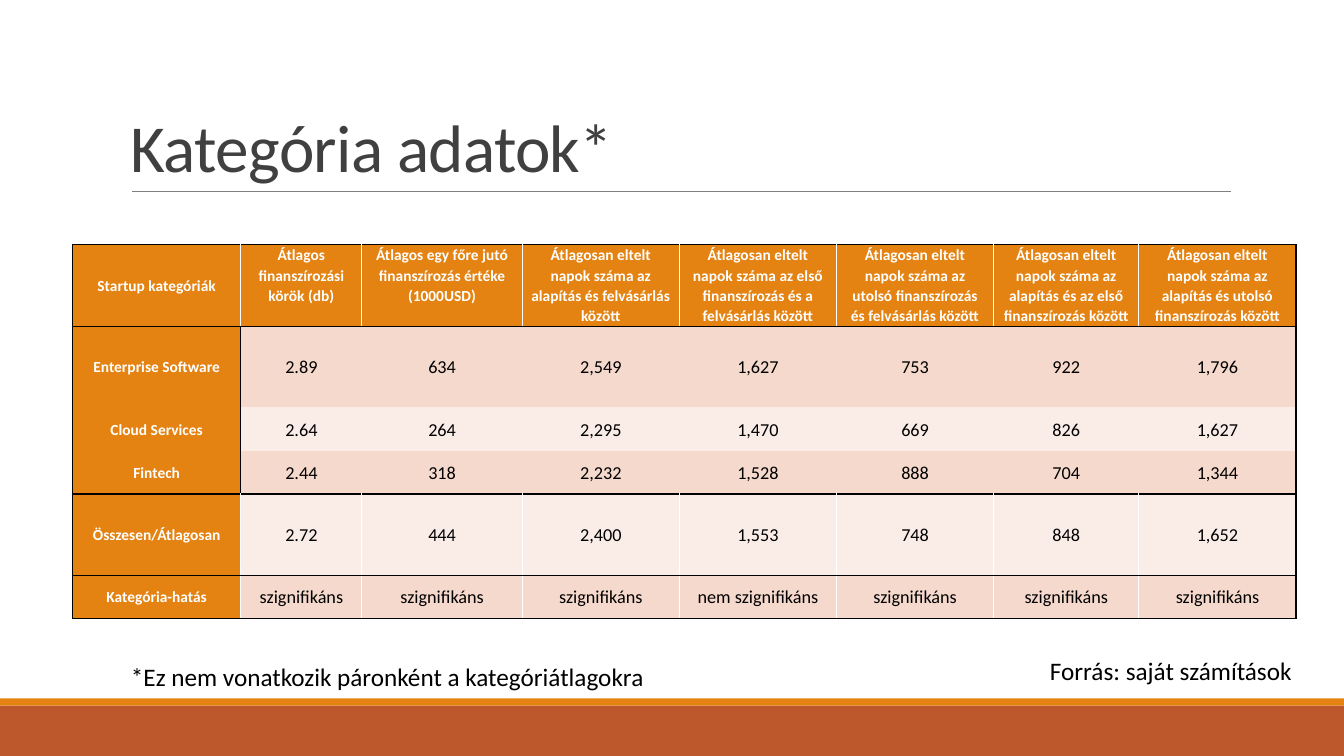
from dataclasses import dataclass

from lxml.etree import SubElement
from pptx import Presentation
from pptx.dml.color import RGBColor
from pptx.enum.shapes import MSO_CONNECTOR, MSO_SHAPE
from pptx.enum.text import MSO_ANCHOR, MSO_AUTO_SIZE, PP_ALIGN
from pptx.oxml.ns import qn
from pptx.util import Cm, Pt


@dataclass(frozen=True)
class Theme:
    font: str = "Calibri"
    orange: str = "E48312"
    rust: str = "BD582C"
    band_dark: str = "F5D9CC"
    band_light: str = "FAEDE7"
    title: str = "404040"
    rule: str = "808080"
    black: str = "000000"
    white: str = "FFFFFF"
    title_size: float = 48
    note_size: float = 18
    value_size: float = 13
    header_size: float = 11


HEADERS = [
    "Startup kategóriák",
    "Átlagos finanszírozási körök (db)",
    "Átlagos egy főre jutó finanszírozás értéke (1000USD)",
    "Átlagosan eltelt napok száma az alapítás és felvásárlás között",
    "Átlagosan eltelt napok száma az első finanszírozás és a felvásárlás között",
    "Átlagosan eltelt napok száma az utolsó finanszírozás és felvásárlás között",
    "Átlagosan eltelt napok száma az alapítás és az első finanszírozás között",
    "Átlagosan eltelt napok száma az alapítás és utolsó finanszírozás között",
]
ROWS = [
    HEADERS,
    ["Enterprise Software", "2.89", "634", "2,549", "1,627", "753", "922", "1,796"],
    ["Cloud Services", "2.64", "264", "2,295", "1,470", "669", "826", "1,627"],
    ["Fintech", "2.44", "318", "2,232", "1,528", "888", "704", "1,344"],
    ["Összesen/Átlagosan", "2.72", "444", "2,400", "1,553", "748", "848", "1,652"],
    ["Kategória-hatás"] + ["szignifikáns"] * 3 + ["nem szignifikáns"] + ["szignifikáns"] * 3,
]
COL_WIDTHS = [4.24, 3.05, 4.04, 3.96, 3.96, 3.96, 3.66, 3.96]
ROW_HEIGHTS = [2.05, 2.05, 1.09, 1.09, 2.05, 1.09]
CATEGORY_ROWS = range(1, 4)


class SlideBuilder:
    def __init__(self, slide, theme):
        self.slide = slide
        self.theme = theme

    def run(self, p, text, size, color, bold=False):
        r = p.add_run()
        r.text = text
        r.font.name = self.theme.font
        r.font.size = Pt(size)
        r.font.bold = bold
        r.font.color.rgb = RGBColor.from_string(color)
        return r

    def bar(self, top, height, color):
        sp = self.slide.shapes.add_shape(
            MSO_SHAPE.RECTANGLE, 0, Cm(top), Cm(33.87), Cm(height))
        sp.shadow.inherit = False
        sp.fill.solid()
        sp.fill.fore_color.rgb = RGBColor.from_string(color)
        sp.line.fill.background()

    def rule(self, left, right, y):
        line = self.slide.shapes.add_connector(
            MSO_CONNECTOR.STRAIGHT, Cm(left), Cm(y), Cm(right), Cm(y))
        line.line.color.rgb = RGBColor.from_string(self.theme.rule)
        line.line.width = Pt(0.5)
        SubElement(line.element.spPr, qn("a:effectLst"))

    def textbox(self, left, top, width, height):
        sp = self.slide.shapes.add_textbox(Cm(left), Cm(top), Cm(width), Cm(height))
        sp.text_frame.word_wrap = True
        return sp.text_frame

    def title(self, text):
        tf = self.textbox(3.05, 0.79, 27.94, 4.04)
        tf.vertical_anchor = MSO_ANCHOR.BOTTOM
        p = tf.paragraphs[0]
        p.line_spacing = 0.85
        r = self.run(p, text, self.theme.title_size, self.theme.title)
        r.font._element.set("spc", "-50")

    def note(self, text, left, top, width):
        tf = self.textbox(left, top, width, 1.03)
        tf.auto_size = MSO_AUTO_SIZE.SHAPE_TO_FIT_TEXT
        self.run(tf.paragraphs[0], text, self.theme.note_size, self.theme.black)

    def vertical_edge(self, row, edge):
        if edge in (0, len(COL_WIDTHS)):
            return self.theme.black
        if row in CATEGORY_ROWS:
            return self.theme.black if edge == 1 else None
        return self.theme.white

    def horizontal_edge(self, edge):
        # The category rows form one block with no lines between them
        return None if edge in CATEGORY_ROWS[1:] else self.theme.black

    def borders(self, cell, row, col):
        tc_pr = cell._tc.get_or_add_tcPr()
        edges = {
            "a:lnL": self.vertical_edge(row, col),
            "a:lnR": self.vertical_edge(row, col + 1),
            "a:lnT": self.horizontal_edge(row),
            "a:lnB": self.horizontal_edge(row + 1),
        }
        for tag, color in edges.items():
            ln = SubElement(tc_pr, qn(tag), w=str(Pt(1)))
            if color:
                fill = SubElement(ln, qn("a:solidFill"))
                SubElement(fill, qn("a:srgbClr"), val=color)
            else:
                SubElement(ln, qn("a:noFill"))

    def cell(self, cell, text, row, col):
        th = self.theme
        heading = row == 0 or col == 0
        band = th.band_dark if row % 2 else th.band_light
        self.borders(cell, row, col)
        cell.fill.solid()
        cell.fill.fore_color.rgb = RGBColor.from_string(th.orange if heading else band)
        cell.margin_left = cell.margin_right = Cm(0.18)
        cell.margin_top = cell.margin_bottom = 0
        top = row == 0 and col > 0
        cell.vertical_anchor = MSO_ANCHOR.TOP if top else MSO_ANCHOR.MIDDLE
        p = cell.text_frame.paragraphs[0]
        p.alignment = PP_ALIGN.CENTER
        p.line_spacing = 1.07
        if heading:
            self.run(p, text, th.header_size, th.white, bold=True)
        else:
            self.run(p, text, th.value_size, th.black)

    def table(self, left, top):
        table = self.slide.shapes.add_table(
            len(ROWS), len(COL_WIDTHS), Cm(left), Cm(top),
            Cm(sum(COL_WIDTHS)), Cm(sum(ROW_HEIGHTS))).table
        table.first_row = table.horz_banding = False
        for column, width in zip(table.columns, COL_WIDTHS):
            column.width = Cm(width)
        for table_row, height in zip(table.rows, ROW_HEIGHTS):
            table_row.height = Cm(height)
        for row, texts in enumerate(ROWS):
            for col, text in enumerate(texts):
                self.cell(table.cell(row, col), text, row, col)


def main():
    prs = Presentation()
    prs.slide_width, prs.slide_height = Cm(33.87), Cm(19.05)
    theme = Theme()
    s = SlideBuilder(prs.slides.add_slide(prs.slide_layouts[6]), theme)

    # Footer bars and title rule
    s.bar(17.78, 1.27, theme.rust)
    s.bar(17.6, 0.18, theme.orange)
    s.rule(3.33, 31.01, 4.83)

    # Title and category table
    s.title("Kategória adatok*")
    s.table(1.83, 6.17)

    # Footnote and source
    s.note("*Ez nem vonatkozik páronként a kategóriátlagokra", 3.05, 16.54, 13.97)
    s.note("Forrás: saját számítások", 26.21, 16.38, 8.13)

    prs.save("out.pptx")


if __name__ == "__main__":
    main()
